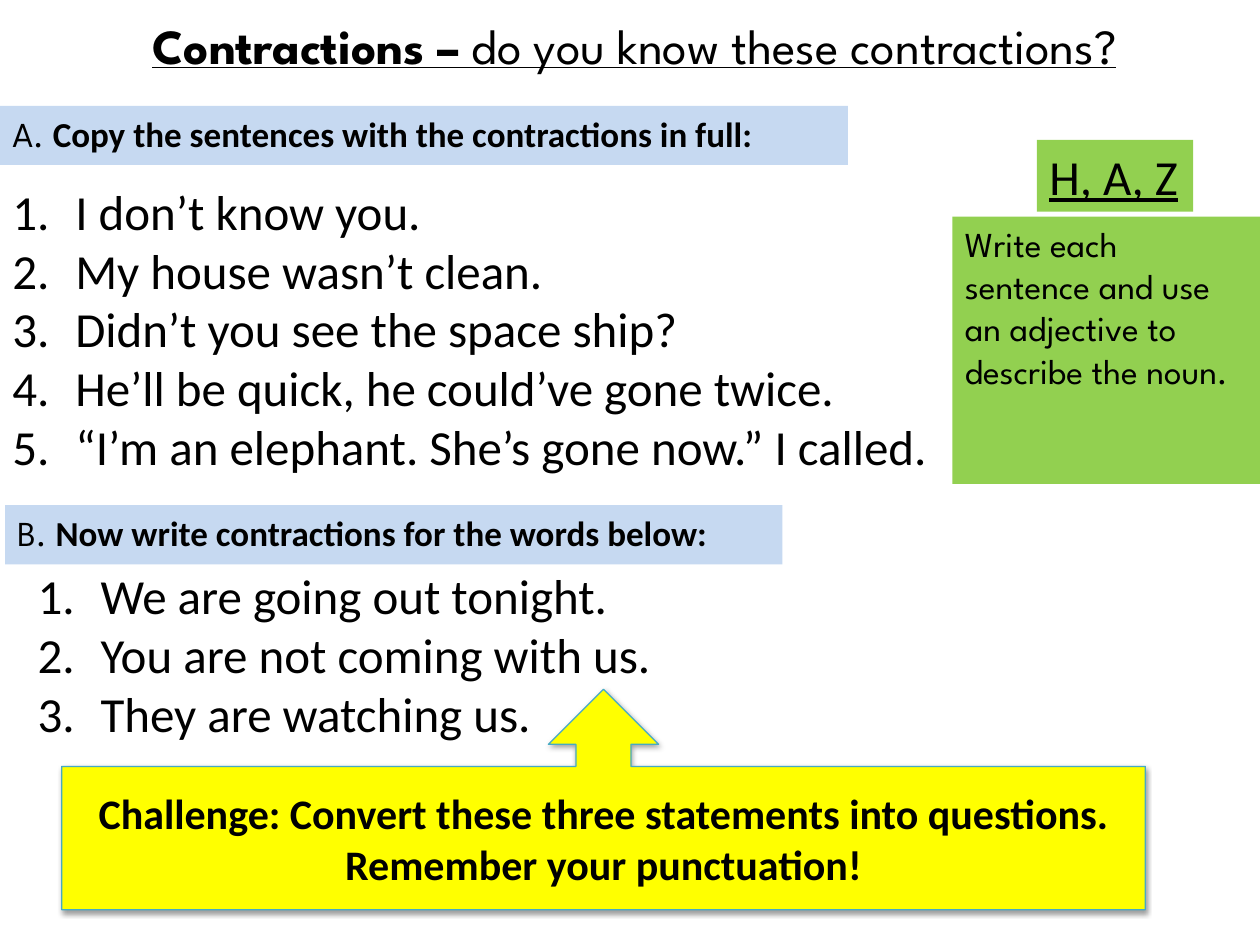
from lxml import etree
from pptx import Presentation
from pptx.dml.color import RGBColor
from pptx.enum.shapes import MSO_SHAPE
from pptx.enum.text import MSO_ANCHOR, PP_ALIGN
from pptx.oxml.ns import qn
from pptx.util import Inches, Pt

RECT = MSO_SHAPE.RECTANGLE
CALLOUT = MSO_SHAPE.UP_ARROW_CALLOUT
TOP, MIDDLE = MSO_ANCHOR.TOP, MSO_ANCHOR.MIDDLE
LEFT, CENTER = PP_ALIGN.LEFT, PP_ALIGN.CENTER
BODY_FONT, DISPLAY_FONT = "Calibri", "League Spartan"
COLORS = {
    "text": "000000",
    "heading": "C6D9F1",
    "extension": "92D050",
    "challenge": "FFFF00",
    "challenge_line": "46AAC5",
    "shadow": "000000",
}
FULL_SENTENCES = [
    "I don’t know you.",
    "My house wasn’t clean.",
    "Didn’t you see the space ship?",
    "He’ll be quick, he could’ve gone twice.",
    "“I’m an elephant. She’s gone now.” I called.",
]
STATEMENTS = [
    "We are going out tonight.",
    "You are not coming with us.",
    "They are watching us.",
]


def rgb(name):
    """Return the named colour."""
    return RGBColor.from_string(COLORS[name])


def add_run(paragraph, text, size=28, font=BODY_FONT, bold=False, underline=False):
    """Append formatted text to a paragraph."""
    run = paragraph.add_run()
    run.text = text
    run.font.size = Pt(size)
    run.font.name = font
    run.font.bold = bold
    run.font.underline = underline
    run.font.color.rgb = rgb("text")


def set_frame(shape, anchor=TOP, align=LEFT, wrap=True):
    """Set up a shape's text frame and return its first paragraph."""
    frame = shape.text_frame
    frame.word_wrap = wrap
    frame.vertical_anchor = anchor
    paragraph = frame.paragraphs[0]
    paragraph.alignment = align
    return paragraph


def add_panel(slide, box, fill, kind=RECT):
    """Add a filled shape without outline or shadow."""
    panel = slide.shapes.add_shape(kind, *map(Inches, box))
    panel.shadow.inherit = False
    panel.fill.solid()
    panel.fill.fore_color.rgb = rgb(fill)
    panel.line.fill.background()
    return panel


def add_title(slide, box):
    """Add the underlined slide title."""
    title = slide.shapes.add_textbox(*map(Inches, box))
    paragraph = set_frame(title, MIDDLE, CENTER)
    add_run(paragraph, "Contractions – ", font=DISPLAY_FONT, bold=True, underline=True)
    add_run(paragraph, "do you know these contractions?", font=DISPLAY_FONT, underline=True)


def add_heading(slide, box, letter, instruction):
    """Add a lettered instruction bar."""
    paragraph = set_frame(add_panel(slide, box, "heading"))
    paragraph.space_before = Pt(4)
    add_run(paragraph, f"{letter}. ", size=20, font=DISPLAY_FONT)
    add_run(paragraph, instruction, size=20, bold=True)


def add_numbered_list(slide, box, sentences):
    """Add sentences numbered with a hanging indent."""
    listing = slide.shapes.add_textbox(*map(Inches, box))
    paragraph = set_frame(listing)
    for index, sentence in enumerate(sentences):
        if index:
            paragraph = listing.text_frame.add_paragraph()
        add_run(paragraph, sentence)
        properties = paragraph._p.get_or_add_pPr()
        properties.set("marL", str(Inches(0.5)))
        properties.set("indent", str(-Inches(0.5)))
        etree.SubElement(properties, qn("a:buFont"), typeface="+mj-lt")
        etree.SubElement(properties, qn("a:buAutoNum"), type="arabicPeriod")


def add_extension(slide, box):
    """Add the group label and its extension task underneath."""
    left, top, width, height = box
    task_top = 0.61
    task = add_panel(slide, (left, top + task_top, width, height - task_top), "extension")
    add_run(set_frame(task), "Write each sentence and use an adjective to describe the noun.",
            size=20, font=DISPLAY_FONT)
    label = add_panel(slide, (left + 0.67, top, 1.24, 0.57), "extension")
    add_run(set_frame(label, wrap=False), "H, A, Z", underline=True)


def add_challenge(slide, box):
    """Add the challenge callout with its soft shadow."""
    challenge = add_panel(slide, box, "challenge", CALLOUT)
    challenge.line.color.rgb = rgb("challenge_line")
    challenge.line.width = Pt(0.75)
    effects = challenge._element.spPr.find(qn("a:effectLst"))
    shadow = etree.SubElement(effects, qn("a:outerShdw"), blurRad=str(Pt(3.1)),
                              dist=str(Pt(1.6)), dir="5400000", rotWithShape="0")
    tint = etree.SubElement(shadow, qn("a:srgbClr"), val=COLORS["shadow"])
    etree.SubElement(tint, qn("a:alpha"), val="38000")
    add_run(set_frame(challenge, MIDDLE, CENTER),
            "Challenge: Convert these three statements into questions. "
            "Remember your punctuation!", size=24, bold=True)


def main():
    """Build and save the contractions slide."""
    presentation = Presentation()
    presentation.slide_width = Inches(10)
    presentation.slide_height = Inches(7.5)
    slide = presentation.slides.add_slide(presentation.slide_layouts[6])
    add_numbered_list(slide, (0, 1.39, 8.74, 2.46), FULL_SENTENCES)
    add_title(slide, (0.39, 0, 9.29, 0.71))
    add_heading(slide, (0, 0.84, 6.73, 0.47), "A",
                "Copy the sentences with the contractions in full:")
    add_extension(slide, (7.56, 1.11, 2.44, 2.73))
    add_heading(slide, (0.04, 4.01, 6.17, 0.47), "B",
                "Now write contractions for the words below:")
    add_numbered_list(slide, (0.2, 4.44, 6.01, 1.51), STATEMENTS)
    add_challenge(slide, (0.49, 5.47, 8.6, 1.75))
    presentation.save("out.pptx")


if __name__ == "__main__":
    main()
